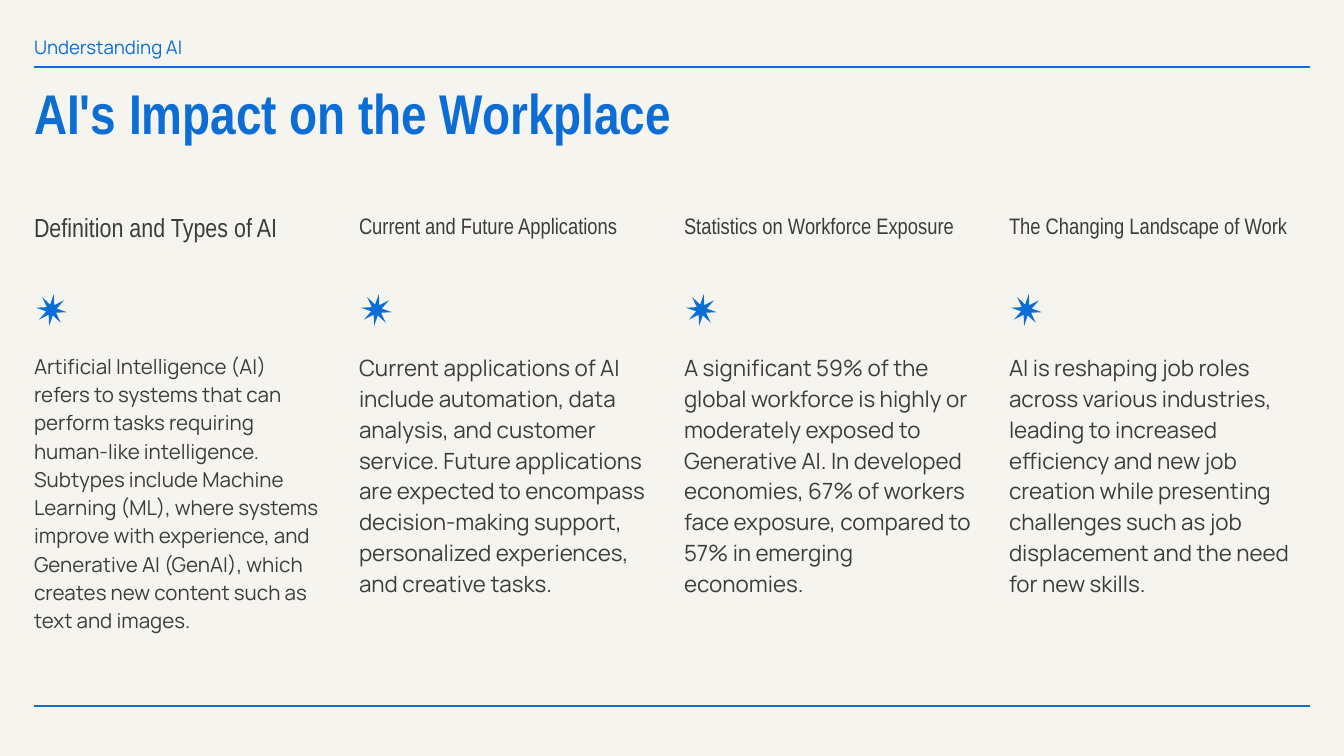
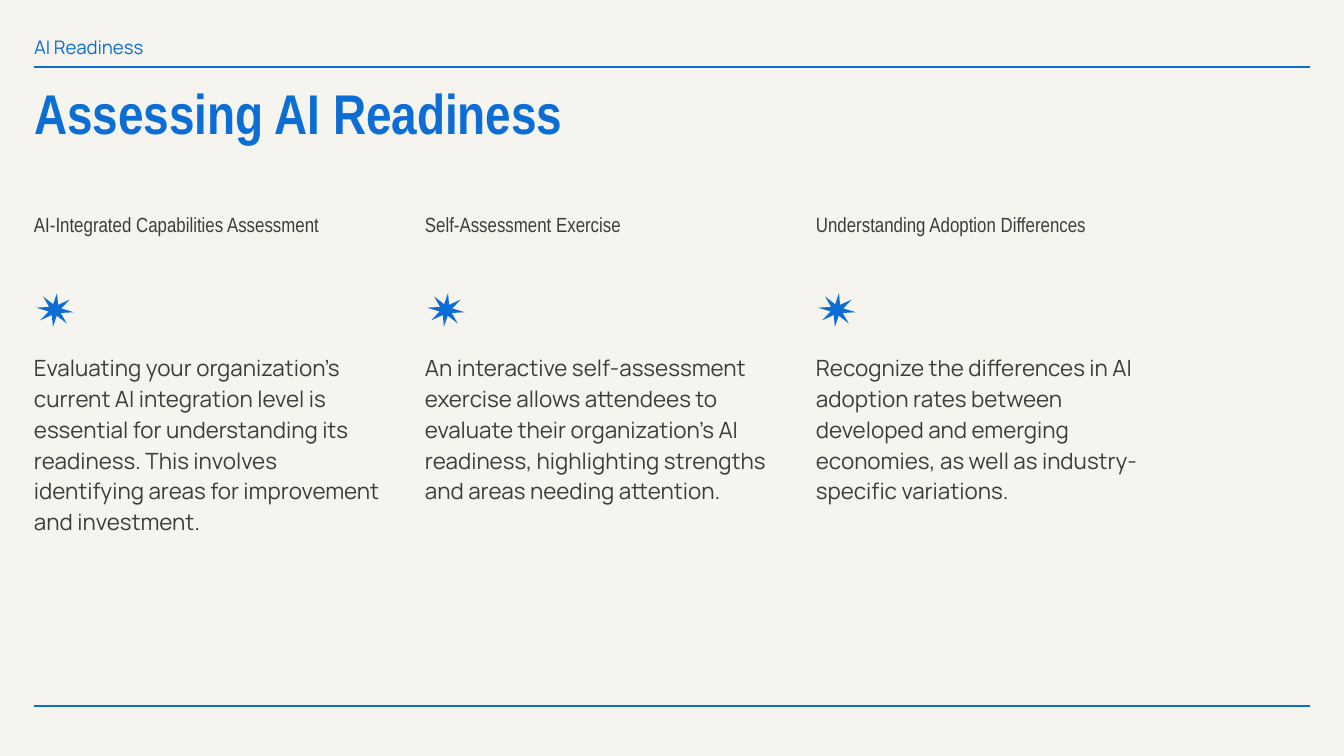
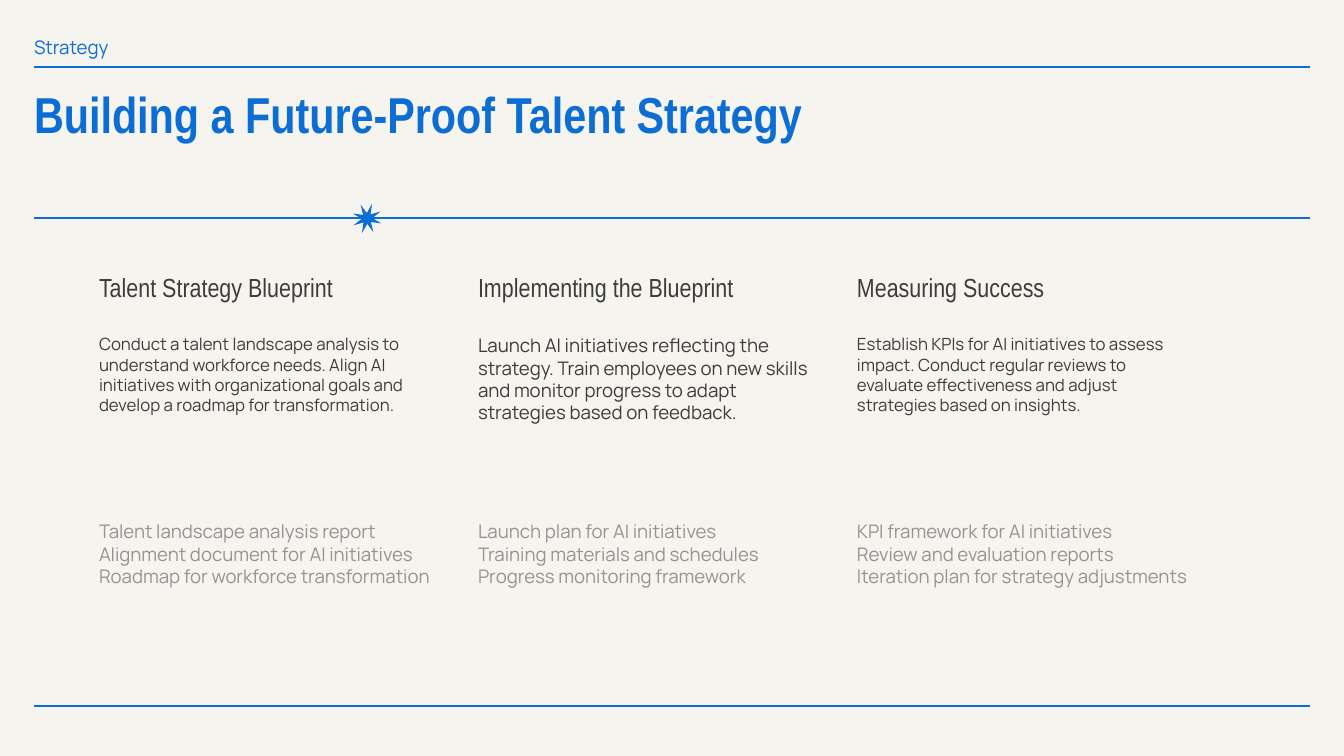
from dataclasses import dataclass

from lxml import etree
from pptx import Presentation
from pptx import util as u
from pptx.dml.color import RGBColor
from pptx.enum import shapes, text
from pptx.oxml.ns import qn


@dataclass(frozen=True)
class Theme:
    paper: RGBColor = RGBColor.from_string("F6F4EE")
    blue: RGBColor = RGBColor.from_string("0C6DD5")
    ink: RGBColor = RGBColor.from_string("3D3C3C")
    muted: RGBColor = RGBColor.from_string("959494")
    display: str = "Arial Narrow"
    sans: str = "Manrope"
    title: int = 30
    title_long: int = 27
    heading: int = 14
    heading_mid: int = 12
    heading_small: int = 11
    body: int = 12
    body_mid: int = 11
    small: int = 10
    tiny: int = 9
    rule: float = 0.75


theme = Theme()
PX = 914400 / 134.4
LEFT, RIGHT = 34, 1310
INSET = 13


def write(box, place, lines, font, size, color, spacing=1.0, after=0,
          inset=INSET, right=INSET, anchor=text.MSO_ANCHOR.TOP, bold=False):
    box.left, box.top, box.width, box.height = [round(n * PX) for n in place]
    frame = box.text_frame
    frame.word_wrap = True
    frame.auto_size = text.MSO_AUTO_SIZE.NONE
    frame.vertical_anchor = anchor
    frame.margin_left = 0
    frame.margin_right = round(right * PX)
    frame.margin_top = frame.margin_bottom = round(inset * PX)
    for index, line in enumerate(lines):
        para = frame.add_paragraph() if index else frame.paragraphs[0]
        para.alignment = text.PP_ALIGN.LEFT
        para.line_spacing = spacing
        para.space_before = u.Pt(0)
        para.space_after = u.Pt(after)
        span = para.add_run()
        span.text = line
        span.font.name = font
        span.font.size = u.Pt(size)
        span.font.bold = bold
        span.font.color.rgb = color


def add_star(page, place, angle):
    star = page.shapes.add_shape(
        shapes.MSO_SHAPE.STAR_8_POINT, *[round(n * PX) for n in place])
    star.adjustments[0] = 0.174
    star.rotation = angle
    star.shadow.inherit = False
    star.fill.solid()
    star.fill.fore_color.rgb = theme.blue
    star.line.fill.background()


deck = Presentation()
deck.slide_width = round(1344 * PX)
deck.slide_height = round(756 * PX)
background = deck.slide_master.background.fill
background.solid()
background.fore_color.rgb = theme.paper

headers = [
    ("Understanding AI", "AI's Impact on the Workplace", theme.title, [67, 706]),
    ("AI Readiness", "Assessing AI Readiness", theme.title, [67, 706]),
    ("Strategy", "Building a Future-Proof Talent Strategy", theme.title_long, [67, 706, 218]),
]
pages = []
for topic, title, size, rules in headers:
    page = deck.slides.add_slide(deck.slide_layouts[5])
    pages.append(page)
    for y in rules:
        rule = page.shapes.add_connector(
            shapes.MSO_CONNECTOR.STRAIGHT,
            *[round(n * PX) for n in (LEFT, y, RIGHT, y)])
        rule.line.color.rgb = theme.blue
        rule.line.width = u.Pt(theme.rule)
        etree.SubElement(rule.element.spPr, qn("a:effectLst"))
    write(page.shapes.title, (LEFT, 77, RIGHT - LEFT, 85), [title], theme.display, size,
          theme.blue, spacing=0.75, right=0, anchor=text.MSO_ANCHOR.MIDDLE, bold=True)
    write(page.shapes.add_textbox(0, 0, 0, 0), (LEFT, 23, 622, 35), [topic],
          theme.sans, theme.small, theme.blue)

impact_columns = [
    ("Definition and Types of AI", theme.heading,
     "Artificial Intelligence (AI) refers to systems that can perform tasks requiring "
     "human-like intelligence. Subtypes include Machine Learning (ML), where systems "
     "improve with experience, and Generative AI (GenAI), which creates new content "
     "such as text and images.", theme.body_mid),
    ("Current and Future Applications", theme.heading_mid,
     "Current applications of AI include automation, data analysis, and customer "
     "service. Future applications are expected to encompass decision-making support, "
     "personalized experiences, and creative tasks.", theme.body),
    ("Statistics on Workforce Exposure", theme.heading_mid,
     "A significant 59% of the global workforce is highly or moderately exposed to "
     "Generative AI. In developed economies, 67% of workers face exposure, compared "
     "to 57% in emerging economies.", theme.body),
    ("The Changing Landscape of Work", theme.heading_mid,
     "AI is reshaping job roles across various industries, leading to increased "
     "efficiency and new job creation while presenting challenges such as job "
     "displacement and the need for new skills.", theme.body),
]
readiness_columns = [
    ("AI-Integrated Capabilities Assessment", theme.heading_small,
     "Evaluating your organization's current AI integration level is essential for "
     "understanding its readiness. This involves identifying areas for improvement "
     "and investment.", theme.body),
    ("Self-Assessment Exercise", theme.heading_small,
     "An interactive self-assessment exercise allows attendees to evaluate their "
     "organization's AI readiness, highlighting strengths and areas needing "
     "attention.", theme.body),
    ("Understanding Adoption Differences", theme.heading_small,
     "Recognize the differences in AI adoption rates between developed and emerging "
     "economies, as well as industry-specific variations.", theme.body),
]
column_pages = [
    (pages[0], impact_columns, 325, 301, (294, 31, 32), 8.3),
    (pages[1], readiness_columns, 391, 363, (293, 38, 34), 6.9),
]
for page, columns, step, width, (star_top, star_width, star_height), angle in column_pages:
    for index, (heading, heading_size, body, body_size) in enumerate(columns):
        x = LEFT + index * step
        write(page.shapes.add_textbox(0, 0, 0, 0), (x, 216, width, 85), [heading],
              theme.display, heading_size, theme.ink, spacing=0.85, after=8, inset=0)
        write(page.shapes.add_textbox(0, 0, 0, 0), (x, 337, width, 358), [body],
              theme.sans, body_size, theme.ink, spacing=1.15, after=8)
        add_star(page, (x + 2, star_top, star_width, star_height), angle)

strategy_steps = [
    ("Talent Strategy Blueprint",
     "Conduct a talent landscape analysis to understand workforce needs. Align AI "
     "initiatives with organizational goals and develop a roadmap for transformation.",
     theme.tiny,
     ["Talent landscape analysis report",
      "Alignment document for AI initiatives",
      "Roadmap for workforce transformation"]),
    ("Implementing the Blueprint",
     "Launch AI initiatives reflecting the strategy. Train employees on new skills "
     "and monitor progress to adapt strategies based on feedback.",
     theme.small,
     ["Launch plan for AI initiatives",
      "Training materials and schedules",
      "Progress monitoring framework"]),
    ("Measuring Success",
     "Establish KPIs for AI initiatives to assess impact. Conduct regular reviews to "
     "evaluate effectiveness and adjust strategies based on insights.",
     theme.tiny,
     ["KPI framework for AI initiatives",
      "Review and evaluation reports",
      "Iteration plan for strategy adjustments"]),
]
strategy = pages[2]
for index, (heading, body, body_size, deliverables) in enumerate(strategy_steps):
    x = 99 + index * 379
    write(strategy.shapes.add_textbox(0, 0, 0, 0), (x, 228, 351, 74), [heading],
          theme.display, theme.heading, theme.ink, spacing=0.75, inset=0,
          anchor=text.MSO_ANCHOR.BOTTOM)
    write(strategy.shapes.add_textbox(0, 0, 0, 0), (x, 321, 351, 167), [body],
          theme.sans, body_size, theme.ink, after=8)
    write(strategy.shapes.add_textbox(0, 0, 0, 0), (x, 507, 351, 192), deliverables,
          theme.sans, theme.small, theme.muted)
add_star(strategy, (352, 203, 30, 31), 19.1)

deck.save("out.pptx")
